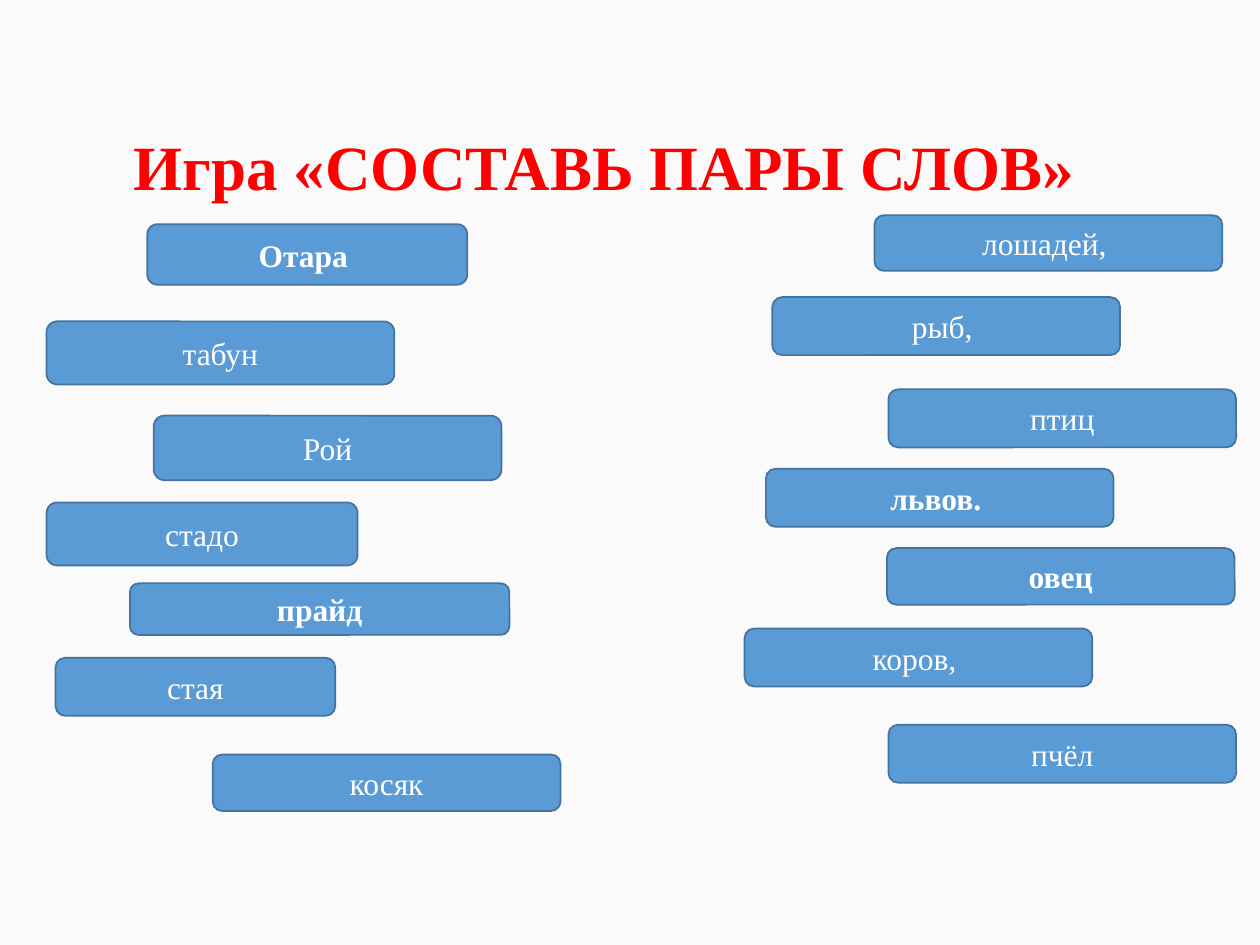
from pptx import Presentation
from pptx.dml.color import RGBColor
from pptx.enum import shapes, text
from pptx.util import Cm, Pt

TITLE = "Игра «СОСТАВЬ ПАРЫ СЛОВ»"
WIDE = 7.01  # usual card width, cm

# word, bold, left, top, width, height (cm)
GROUPS = [
    ("Отара ", True, 2.97, 4.52, 6.45, 1.22),
    ("табун", False, 0.94, 6.48, WIDE, 1.27),
    ("Рой", False, 3.1, 8.38, WIDE, 1.3),
    ("стадо", False, 0.94, 10.13, 6.27, 1.27),
    ("прайд", True, 2.62, 11.76, 7.65, 1.04),
    ("стая", False, 1.12, 13.26, 5.64, 1.17),
    ("косяк", False, 4.29, 15.21, WIDE, 1.14),
]
ANIMALS = [
    ("лошадей, ", False, 17.63, 4.34, WIDE, 1.12),
    ("рыб, ", False, 15.57, 5.99, WIDE, 1.17),
    ("птиц", False, 17.91, 7.85, WIDE, 1.17),
    ("львов. ", True, 15.44, 9.45, WIDE, 1.17),
    ("овец", True, 17.88, 11.05, WIDE, 1.14),
    ("коров, ", False, 15.01, 12.67, WIDE, 1.17),
    ("пчёл", False, 17.91, 14.61, WIDE, 1.17),
]

FONT = "Times New Roman"
PAPER = RGBColor(0xFA, 0xFA, 0xFA)
RED = RGBColor(0xFF, 0x00, 0x00)
BLUE = RGBColor(0x5B, 0x9B, 0xD5)
EDGE = RGBColor(0x43, 0x73, 0x9E)
WHITE = RGBColor(0xFF, 0xFF, 0xFF)


def write(frame, words, size, color, bold, anchor):
    frame.text = words
    frame.word_wrap = True
    frame.auto_size = text.MSO_AUTO_SIZE.NONE
    frame.vertical_anchor = anchor
    par = frame.paragraphs[0]
    par.alignment = text.PP_ALIGN.CENTER
    font = par.runs[0].font
    font.name, font.size, font.bold = FONT, Pt(size), bold
    font.color.rgb = color


def add_card(slide, word, bold, *box):
    card = slide.shapes.add_shape(
        shapes.MSO_SHAPE.ROUNDED_RECTANGLE, *map(Cm, box))
    card.shadow.inherit = False
    card.fill.solid()
    card.fill.fore_color.rgb = BLUE
    card.line.color.rgb = EDGE
    card.line.width = Pt(1)
    write(card.text_frame, word, 18, WHITE, bold, text.MSO_ANCHOR.MIDDLE)


def main():
    deck = Presentation()
    deck.slide_width, deck.slide_height = Cm(25.4), Cm(19.05)
    slide = deck.slides.add_slide(deck.slide_layouts.get_by_name("Title Only"))
    slide.background.fill.solid()
    slide.background.fill.fore_color.rgb = PAPER

    title = slide.shapes.title
    title.left, title.top = Cm(1.75), Cm(2.44)
    title.width, title.height = Cm(20.85), Cm(6.4)
    write(title.text_frame, TITLE, 36, RED, True, text.MSO_ANCHOR.TOP)

    for card in GROUPS + ANIMALS:
        add_card(slide, *card)
    deck.save("out.pptx")


if __name__ == "__main__":
    main()
